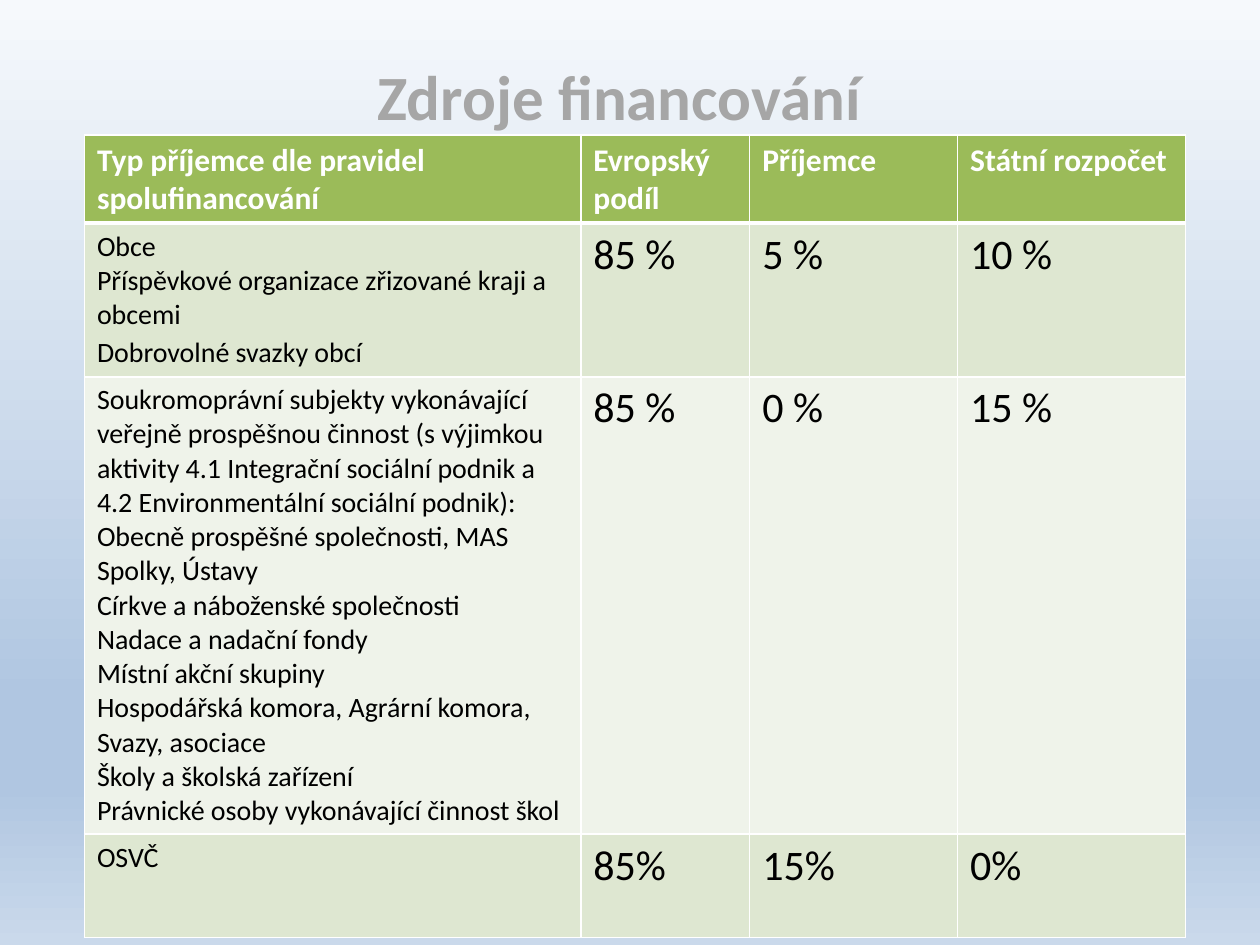
from dataclasses import dataclass

from lxml import etree
from pptx import Presentation
from pptx.dml.color import RGBColor
from pptx.enum.text import MSO_ANCHOR, PP_ALIGN
from pptx.oxml.ns import qn
from pptx.util import Inches, Pt

MIDDLE = MSO_ANCHOR.MIDDLE
CENTER = PP_ALIGN.CENTER
FONT = "Calibri"
WHITE, BLACK, GREY = "FFFFFF", "000000", "A6A6A6"
GREEN, LIGHT_GREEN, PALE_GREEN = "9BBB59", "DEE7D1", "EFF3EA"
BACKGROUND_STOPS = [(0, "F6F9FC"), (74, "B0C6E1"), (83, "B0C6E1"), (100, "CAD9EB")]
COLUMN_WIDTHS = [3.94, 1.34, 1.65, 1.81]
HEADERS = ["Typ příjemce dle pravidel spolufinancování", "Evropský podíl",
           "Příjemce", "Státní rozpočet"]


@dataclass
class FundingRow:
    recipients: list[str]
    shares: list[str]
    height: float
    fill: str


FUNDING_ROWS = [
    FundingRow(
        ["Obce", "Příspěvkové organizace zřizované kraji a obcemi",
         "Dobrovolné svazky obcí"],
        ["85 %", "5 %", "10 %"], 1.22, LIGHT_GREEN),
    FundingRow(
        ["Soukromoprávní subjekty vykonávající veřejně prospěšnou činnost "
         "(s výjimkou aktivity 4.1 Integrační sociální podnik a "
         "4.2 Environmentální sociální podnik):",
         "Obecně prospěšné společnosti, MAS",
         "Spolky, Ústavy",
         "Církve a náboženské společnosti",
         "Nadace a nadační fondy",
         "Místní akční skupiny",
         "Hospodářská komora, Agrární komora, Svazy, asociace",
         "Školy a školská zařízení",
         "Právnické osoby vykonávající činnost škol"],
        ["85 %", "0 %", "15 %"], 3.63, PALE_GREEN),
    FundingRow(["OSVČ"], ["85%", "15%", "0%"], 0.82, LIGHT_GREEN),
]


def rgb(color: str) -> RGBColor:
    return RGBColor.from_string(color)


def add_color(parent, color: str) -> None:
    etree.SubElement(parent, qn("a:srgbClr"), val=color)


def set_background(s) -> None:
    fill = s.background.fill
    fill.gradient()
    fill.gradient_angle = 270
    stops = s.element.find(".//" + qn("a:gsLst"))
    for stop in list(stops):
        stops.remove(stop)
    for percent, color in BACKGROUND_STOPS:
        add_color(etree.SubElement(stops, qn("a:gs"), pos=str(percent * 1000)), color)


def add_run(p, text: str, size: float, color: str, bold: bool = False) -> None:
    r = p.add_run()
    r.text = text
    r.font.name = FONT
    r.font.size = Pt(size)
    r.font.bold = bold
    r.font.color.rgb = rgb(color)


def set_borders(cell, top: float = 1, bottom: float = 1) -> None:
    """Draw white borders; the line elements must come before the cell fill."""
    tc_pr = cell._tc.get_or_add_tcPr()
    widths = {"a:lnL": 1, "a:lnR": 1, "a:lnT": top, "a:lnB": bottom}
    for index, (tag, width) in enumerate(widths.items()):
        line = etree.Element(qn(tag), w=str(Pt(width)))
        add_color(etree.SubElement(line, qn("a:solidFill")), WHITE)
        tc_pr.insert(index, line)


def fill_cell(cell, lines: list[str], size: float, color: str, fill: str,
              bold: bool = False) -> None:
    cell.fill.solid()
    cell.fill.fore_color.rgb = rgb(fill)
    tf = cell.text_frame
    for index, line in enumerate(lines):
        p = tf.add_paragraph() if index else tf.paragraphs[0]
        add_run(p, line, size, color, bold)


def add_title(s) -> None:
    sp = s.shapes.add_textbox(Inches(0.75), Inches(0.44), Inches(8.5), Inches(0.63))
    tf = sp.text_frame
    tf.word_wrap = True
    tf.vertical_anchor = MIDDLE
    tf.margin_right = Inches(0.27)
    p = tf.paragraphs[0]
    p.alignment = CENTER
    add_run(p, "Zdroje financování", 36, GREY, bold=True)


def add_funding_table(s) -> None:
    heights = [0.7] + [row.height for row in FUNDING_ROWS]
    table = s.shapes.add_table(
        len(heights), len(COLUMN_WIDTHS), Inches(0.67), Inches(1.07),
        Inches(sum(COLUMN_WIDTHS)), Inches(sum(heights))).table
    for column, width in zip(table.columns, COLUMN_WIDTHS):
        column.width = Inches(width)
    for row, height in zip(table.rows, heights):
        row.height = Inches(height)

    for col, header in enumerate(HEADERS):
        cell = table.cell(0, col)
        fill_cell(cell, [header], 18, WHITE, GREEN, bold=True)
        set_borders(cell, bottom=3)
    for index, row in enumerate(FUNDING_ROWS, start=1):
        fill_cell(table.cell(index, 0), row.recipients, 16, BLACK, row.fill)
        for col, share in enumerate(row.shares, start=1):
            fill_cell(table.cell(index, col), [share], 24, BLACK, row.fill)
        for col in range(len(COLUMN_WIDTHS)):
            set_borders(table.cell(index, col), top=3 if index == 1 else 1)
    table.cell(1, 0).text_frame.paragraphs[-1].space_before = Pt(2)


def main() -> None:
    prs = Presentation()
    prs.slide_width, prs.slide_height = Inches(10), Inches(7.5)
    s = prs.slides.add_slide(prs.slide_layouts[6])
    set_background(s)
    add_title(s)
    add_funding_table(s)
    prs.save("out.pptx")


if __name__ == "__main__":
    main()
